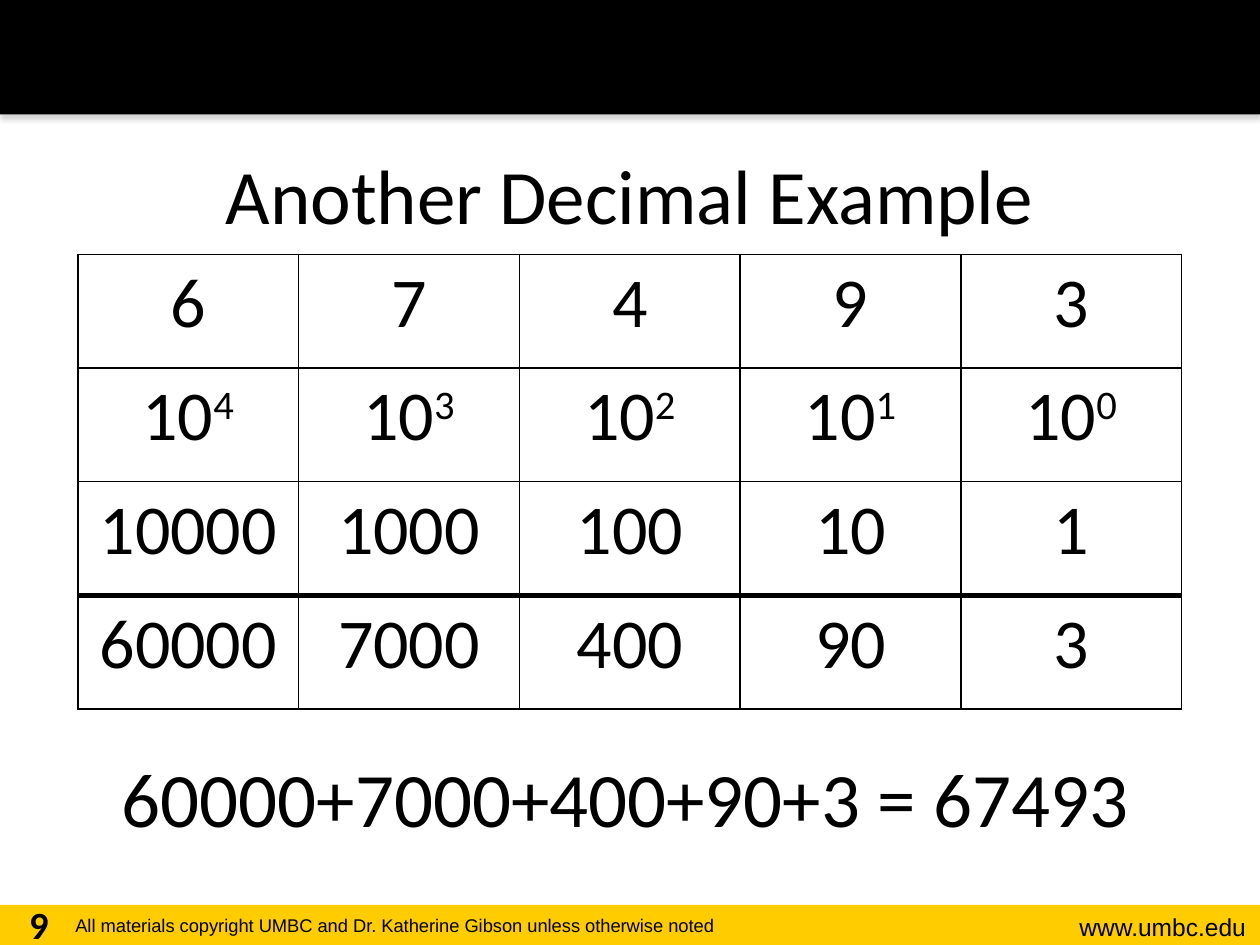
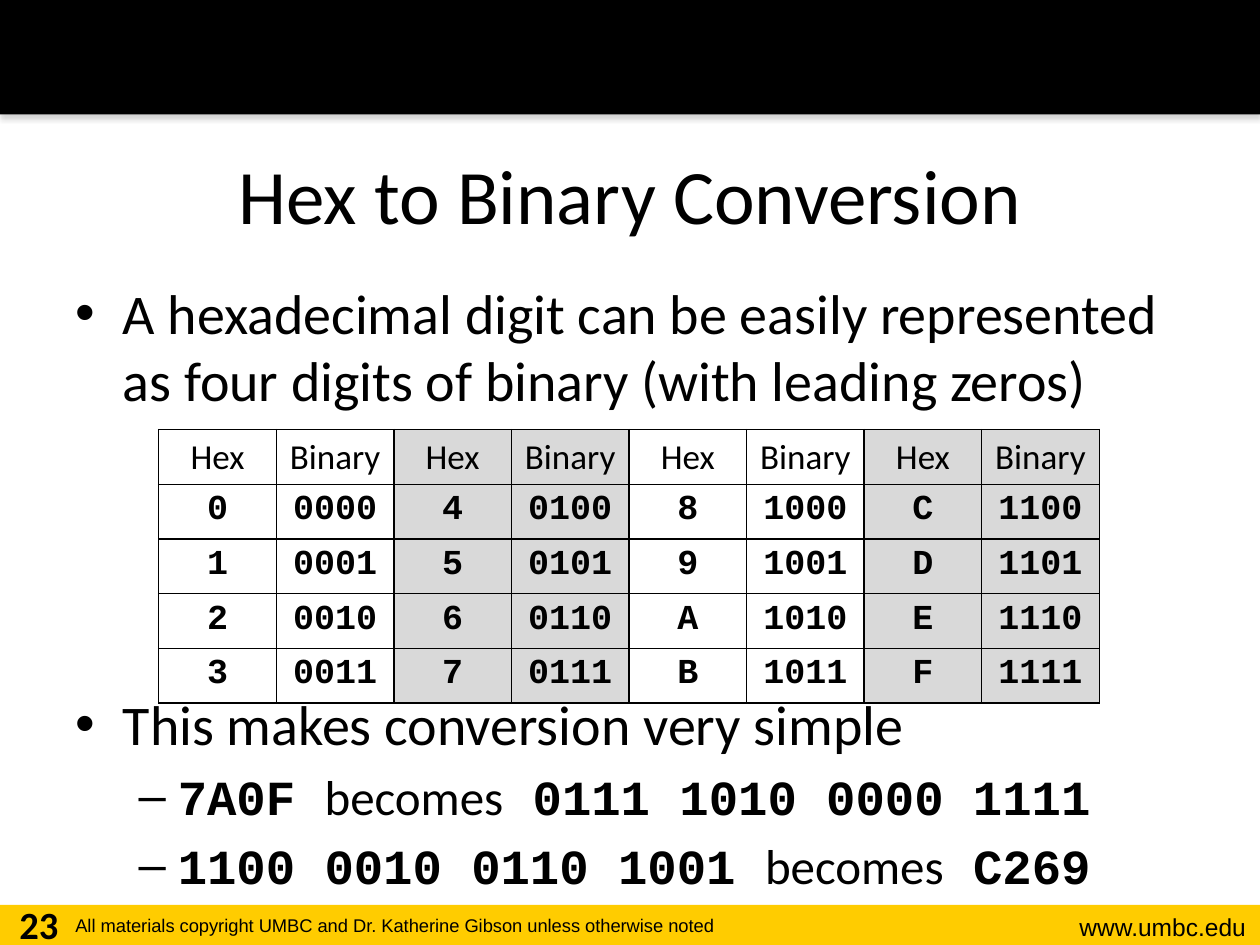
from dataclasses import dataclass

import lxml.etree
import pptx
import pptx.dml.color
import pptx.enum.shapes
import pptx.enum.text
import pptx.oxml
import pptx.oxml.ns
import pptx.util

Cm = pptx.util.Cm
Pt = pptx.util.Pt
Align = pptx.enum.text.PP_ALIGN
Anchor = pptx.enum.text.MSO_ANCHOR
qn = pptx.oxml.ns.qn


@dataclass(frozen=True)
class Theme:
    black: str = "000000"
    white: str = "FFFFFF"
    gold: str = "FFCC00"
    grey: str = "D9D9D9"
    shadow: str = "808080"
    text_font: str = "Calibri"
    code_font: str = "Courier New"
    footer_font: str = "Arial"
    title_size: float = 44
    digit_size: float = 40
    bullet_size: float = 32
    example_size: float = 28
    number_size: float = 22
    code_table_size: float = 20
    address_size: float = 14
    copyright_size: float = 10.5


THEME = Theme()


def color(value):
    return pptx.dml.color.RGBColor.from_string(value)


def add_span(para, text, size, font=THEME.text_font, bold=False, raised=False):
    span = para.add_run()
    span.text = text
    span.font.name = font
    span.font.size = Pt(size)
    span.font.bold = bold
    span.font.color.rgb = color(THEME.black)
    if raised:
        span._r.get_or_add_rPr().set("baseline", "30000")


def place(shape, left, top, width, height):
    shape.left, shape.top = Cm(left), Cm(top)
    shape.width, shape.height = Cm(width), Cm(height)


def add_band(page, top, height, fill):
    band = page.shapes.add_shape(
        pptx.enum.shapes.MSO_SHAPE.RECTANGLE, 0, Cm(top), Cm(25.4), Cm(height))
    band.shadow.inherit = False
    band.fill.solid()
    band.fill.fore_color.rgb = color(fill)
    band.line.fill.background()
    return band


def add_shadow(shape):
    effects = shape._element.spPr.find(qn("a:effectLst"))
    outer = lxml.etree.SubElement(
        effects, qn("a:outerShdw"), blurRad=str(Pt(3.1)), dist=str(Pt(1.8)),
        dir="5400000", algn="ctr", rotWithShape="0")
    tint = lxml.etree.SubElement(outer, qn("a:srgbClr"), val=THEME.shadow)
    lxml.etree.SubElement(tint, qn("a:alpha"), val="35000")


def add_label(page, bounds, text, size, align=Align.LEFT, wrap=True, **style):
    box = page.shapes.add_textbox(*(Cm(length) for length in bounds))
    box.text_frame.word_wrap = wrap
    para = box.text_frame.paragraphs[0]
    para.alignment = align
    add_span(para, text, size, **style)


def add_page(deck, layout, title, number):
    page = deck.slides.add_slide(deck.slide_layouts.get_by_name(layout))
    add_band(page, 18.24, 0.81, THEME.gold)
    add_shadow(add_band(page, 0, 2.31, THEME.black))
    add_label(page, (20.32, 18.26, 5.05, 0.86), "www.umbc.edu",
              THEME.address_size, Align.RIGHT, font=THEME.footer_font)
    add_label(page, (1.27, 18.31, 16.66, 0.74),
              "All materials copyright UMBC and Dr. Katherine Gibson unless otherwise noted",
              THEME.copyright_size, font=THEME.footer_font)
    add_label(page, (0, 18.03, 1.57, 1.02), number, THEME.number_size,
              Align.CENTER, bold=True)
    heading = page.shapes.title
    place(heading, 1.27, 2.31, 22.86, 3.18)
    heading.text_frame.auto_size = pptx.enum.text.MSO_AUTO_SIZE.NONE
    heading.text_frame.vertical_anchor = Anchor.MIDDLE
    para = heading.text_frame.paragraphs[0]
    para.alignment = Align.CENTER
    add_span(para, title, THEME.title_size)
    return page


def add_bullet(para, mark, margin, hanging, before):
    properties = para._p.get_or_add_pPr()
    properties.set("marL", str(Cm(margin)))
    properties.set("indent", str(-Cm(hanging)))
    lxml.etree.SubElement(properties, qn("a:buFont"), typeface="Arial")
    lxml.etree.SubElement(properties, qn("a:buChar"), char=mark)
    para.space_before = Pt(before)


def add_point(para, text, before):
    add_bullet(para, "•", 0.95, 0.95, before)
    add_span(para, text, THEME.bullet_size)


def add_example(para, source, result):
    para.level = 1
    add_bullet(para, "–", 2.06, 0.79, 5.6)
    size = THEME.example_size
    add_span(para, source + " ", size, THEME.code_font, True)
    add_span(para, "becomes", size)
    add_span(para, " " + result, size, THEME.code_font, True)


def set_border(cell, side, width):
    line = lxml.etree.SubElement(
        cell._tc.get_or_add_tcPr(), qn("a:ln" + side), w=str(Pt(width)))
    fill = lxml.etree.SubElement(line, qn("a:solidFill"))
    lxml.etree.SubElement(fill, qn("a:srgbClr"), val=THEME.black)


def add_grid(page, left, top, column_width, row_height, rows, write_cell,
             fill_of=lambda column: None, thick_row=None):
    frame = page.shapes.add_table(
        len(rows), len(rows[0]), Cm(left), Cm(top),
        Cm(column_width * len(rows[0])), Cm(row_height * len(rows)))
    table = frame.table
    table.first_row = table.horz_banding = False
    for column in table.columns:
        column.width = Cm(column_width)
    for row_index, values in enumerate(rows):
        table.rows[row_index].height = Cm(row_height)
        for column_index, value in enumerate(values):
            cell = table.cell(row_index, column_index)
            cell.margin_left = cell.margin_right = Cm(0.2)
            for side in "LRTB":
                is_thick = (side == "T" and row_index == thick_row
                            or side == "B" and row_index + 1 == thick_row)
                set_border(cell, side, 3 if is_thick else 1)
            fill = fill_of(column_index)
            if fill:
                cell.fill.solid()
                cell.fill.fore_color.rgb = color(fill)
            else:
                cell.fill.background()
            para = cell.text_frame.paragraphs[0]
            para.alignment = Align.CENTER
            write_cell(para, value, row_index)


def write_place_value(para, value, row_index):
    is_power = row_index == 1
    add_span(para, "10" if is_power else str(value), THEME.digit_size)
    if is_power:
        add_span(para, str(value), THEME.digit_size, raised=True)


def write_code(para, value, row_index):
    is_code = row_index > 0
    add_span(para, value, THEME.code_table_size,
             THEME.code_font if is_code else THEME.text_font, is_code)


def build_decimal_page(deck):
    page = add_page(deck, "Title Only", "Another Decimal Example", "9")
    digits = [6, 7, 4, 9, 3]
    powers = [4, 3, 2, 1, 0]
    weights = [10 ** power for power in powers]
    products = [digit * weight for digit, weight in zip(digits, weights)]
    add_grid(page, 1.57, 5.13, 4.45, 2.29, [digits, powers, weights, products],
             write_place_value, thick_row=3)
    add_label(page, (2.21, 15.01, 20.98, 2.13), "60000+7000+400+90+3 = 67493",
              THEME.title_size, wrap=False)


def build_hex_page(deck):
    page = add_page(deck, "Title and Content", "Hex to Binary Conversion", "23")
    body = page.placeholders[1]
    place(body, 1.27, 5.49, 22.86, 12.55)
    frame = body.text_frame
    frame.auto_size = pptx.enum.text.MSO_AUTO_SIZE.NONE
    add_point(frame.paragraphs[0],
              "A hexadecimal digit can be easily represented "
              "as four digits of binary (with leading zeros)", 0)
    add_point(frame.add_paragraph(), "This makes conversion very simple", 158)
    add_example(frame.add_paragraph(), "7A0F", "0111 1010 0000 1111")
    add_example(frame.add_paragraph(), "1100 0010 0110 1001", "C269")

    rows = [["Hex", "Binary"] * 4]
    for first in range(4):
        values = range(first, 16, 4)
        rows.append([text for value in values
                     for text in (f"{value:X}", f"{value:04b}")])
    add_grid(page, 3.2, 8.66, 2.37, 1.05, rows, write_code,
             lambda column: THEME.grey if column // 2 % 2 else THEME.white)


def main():
    deck = pptx.Presentation()
    deck.slide_width = Cm(25.4)
    deck.slide_height = Cm(19.05)
    build_decimal_page(deck)
    build_hex_page(deck)
    deck.save("out.pptx")


if __name__ == "__main__":
    main()
